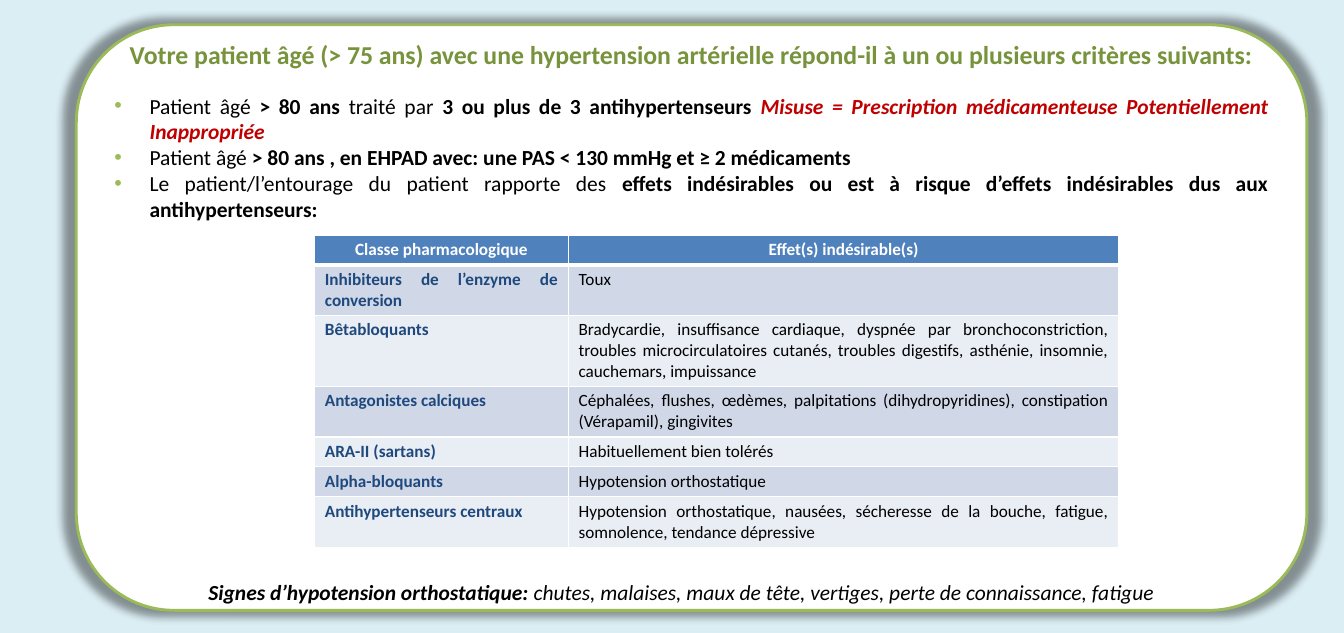
from dataclasses import dataclass

from lxml import etree
from pptx import Presentation, util as u
from pptx.dml.color import RGBColor
from pptx.enum import shapes, text
from pptx.oxml import ns

FONT = "Calibri"
BLACK, WHITE, RED = "000000", "FFFFFF", "C00000"
GREEN, TITLE_GREEN = "9BBB59", "77933C"
HEADER_BLUE, CLASS_BLUE = "4F81BD", "1F497D"
BANDS = ("D0D8E8", "E9EDF4")
CENTER, JUSTIFY = text.PP_ALIGN.CENTER, text.PP_ALIGN.JUSTIFY
TEXT_LEFT, TEXT_WIDTH = 1.11, 11.19


@dataclass(frozen=True)
class Run:
    text: str
    bold: bool = False
    italic: bool = False
    color: str = BLACK


@dataclass(frozen=True)
class DrugClass:
    name: str
    effects: str
    height: float


CRITERIA = [
    [
        Run("Patient âgé "),
        Run("> 80 ans ", bold=True),
        Run("traité par"),
        Run(" 3 ou plus de 3 antihypertenseurs ", bold=True),
        Run("Misuse = Prescription médicamenteuse Potentiellement Inappropriée",
            bold=True, italic=True, color=RED),
    ],
    [
        Run("Patient âgé "),
        Run("> 80 ans , en EHPAD avec: une PAS < 130 mmHg et ≥ 2 médicaments", bold=True),
    ],
    [
        Run("Le patient/l’entourage du patient rapporte des "),
        Run("effets indésirables ou est à risque d’effets indésirables dus aux "
            "antihypertenseurs:", bold=True),
    ],
]

DRUG_CLASSES = [
    DrugClass("Inhibiteurs de l’enzyme de conversion", "Toux", 0.49),
    DrugClass("Bêtabloquants",
              "Bradycardie, insuffisance cardiaque, dyspnée par bronchoconstriction, "
              "troubles microcirculatoires cutanés, troubles digestifs, asthénie, "
              "insomnie, cauchemars, impuissance", 0.69),
    DrugClass("Antagonistes calciques",
              "Céphalées, flushes, œdèmes, palpitations (dihydropyridines), "
              "constipation (Vérapamil), gingivites", 0.49),
    DrugClass("ARA-II (sartans)", "Habituellement bien tolérés", 0.29),
    DrugClass("Alpha-bloquants", "Hypotension orthostatique", 0.29),
    DrugClass("Antihypertenseurs centraux",
              "Hypotension orthostatique, nausées, sécheresse de la bouche, fatigue, "
              "somnolence, tendance dépressive", 0.49),
]


def rgb(value: str) -> RGBColor:
    return RGBColor.from_string(value)


def add_xml(parent, tag: str, **attributes):
    element = etree.SubElement(parent, ns.qn(tag))
    for name, value in attributes.items():
        element.set(name, str(value))
    return element


def write(paragraph, runs: list[Run], *, size: float, align) -> None:
    paragraph.alignment = align
    for item in runs:
        run = paragraph.add_run()
        run.text = item.text
        font = run.font
        font.name, font.size = FONT, u.Pt(size)
        font.bold, font.italic = item.bold, item.italic
        font.color.rgb = rgb(item.color)


def add_bullet(paragraph) -> None:
    properties = paragraph._p.get_or_add_pPr()
    properties.set("marL", str(u.Inches(0.34)))
    properties.set("indent", str(-u.Inches(0.34)))
    add_xml(add_xml(properties, "a:buClr"), "a:srgbClr", val=GREEN)
    add_xml(properties, "a:buFont", typeface="Arial")
    add_xml(properties, "a:buChar", char="•")


def add_text(slide, paragraphs: list[list[Run]], *, top: float, height: float,
             size: float, align, left: float = TEXT_LEFT, width: float = TEXT_WIDTH,
             bullets: bool = False) -> None:
    box = slide.shapes.add_textbox(
        u.Inches(left), u.Inches(top), u.Inches(width), u.Inches(height))
    frame = box.text_frame
    frame.word_wrap = True
    frame.margin_left = frame.margin_right = frame.margin_top = frame.margin_bottom = 0
    for index, runs in enumerate(paragraphs):
        paragraph = frame.add_paragraph() if index else frame.paragraphs[0]
        write(paragraph, runs, size=size, align=align)
        if bullets:
            add_bullet(paragraph)


def add_panel(slide) -> None:
    """Add the rounded white panel with its enlarged soft shadow."""
    panel = slide.shapes.add_shape(
        shapes.MSO_SHAPE.ROUNDED_RECTANGLE,
        u.Inches(0.74), u.Inches(0.24), u.Inches(11.93), u.Inches(5.68))
    panel.fill.solid()
    panel.fill.fore_color.rgb = rgb(WHITE)
    panel.line.color.rgb = rgb(GREEN)
    panel.line.width = u.Pt(2)
    panel.shadow.inherit = False
    effects = panel._element.spPr.find(ns.qn("a:effectLst"))
    shadow = add_xml(effects, "a:outerShdw", blurRad=u.Pt(5), sx=102000, sy=102000,
                     algn="ctr", rotWithShape=0)
    add_xml(add_xml(shadow, "a:srgbClr", val=BLACK), "a:alpha", val=40000)


def fill_cell(cell, run: Run, *, fill: str, align, bottom: float = 1, top: float = 1) -> None:
    cell.margin_left = cell.margin_right = u.Inches(0.1)
    cell.margin_top = cell.margin_bottom = u.Inches(0.04)
    write(cell.text_frame.paragraphs[0], [run], size=12, align=align)
    properties = cell._tc.get_or_add_tcPr()
    for side, width in (("L", 1), ("R", 1), ("T", top), ("B", bottom)):
        line = add_xml(properties, f"a:ln{side}", w=u.Pt(width))
        add_xml(add_xml(line, "a:solidFill"), "a:srgbClr", val=WHITE)
    cell.fill.solid()
    cell.fill.fore_color.rgb = rgb(fill)


def add_effects_table(slide) -> None:
    heights = [0.29] + [drug.height for drug in DRUG_CLASSES]
    table = slide.shapes.add_table(
        len(heights), 2, u.Inches(3.05), u.Inches(2.28),
        u.Inches(7.8), u.Inches(sum(heights))).table
    for column, width in zip(table.columns, (2.46, 5.34)):
        column.width = u.Inches(width)
    for row, height in zip(table.rows, heights):
        row.height = u.Inches(height)
    for column, label in enumerate(("Classe pharmacologique", "Effet(s) indésirable(s)")):
        fill_cell(table.cell(0, column), Run(label, bold=True, color=WHITE),
                  fill=HEADER_BLUE, align=CENTER, bottom=3)
    for row, drug in enumerate(DRUG_CLASSES, start=1):
        runs = (Run(drug.name, bold=True, color=CLASS_BLUE), Run(drug.effects))
        for column, run in enumerate(runs):
            fill_cell(table.cell(row, column), run, fill=BANDS[(row - 1) % 2],
                      align=JUSTIFY, top=3 if row == 1 else 1)


def main() -> None:
    presentation = Presentation()
    presentation.slide_width = u.Inches(13.03)
    presentation.slide_height = u.Inches(6.14)
    slide = presentation.slides.add_slide(presentation.slide_layouts[6])
    slide.background.fill.solid()
    slide.background.fill.fore_color.rgb = rgb("DBEEF4")

    add_panel(slide)
    title = Run("Votre patient âgé (> 75 ans) avec une hypertension artérielle "
                "répond-il à un ou plusieurs critères suivants:",
                bold=True, color=TITLE_GREEN)
    add_text(slide, [[title]], top=0.38, height=0.31, size=18, align=CENTER)
    add_text(slide, CRITERIA, top=0.9, height=1.27, size=15, align=JUSTIFY, bullets=True)
    add_effects_table(slide)
    signs = [
        Run("Signes d’hypotension orthostatique: ", bold=True, italic=True),
        Run("chutes, malaises, maux de tête, vertiges, perte de connaissance, fatigue",
            italic=True),
    ]
    add_text(slide, [signs], left=2.02, width=10.28, top=5.62, height=0.26,
             size=15, align=JUSTIFY)
    presentation.save("out.pptx")


if __name__ == "__main__":
    main()
